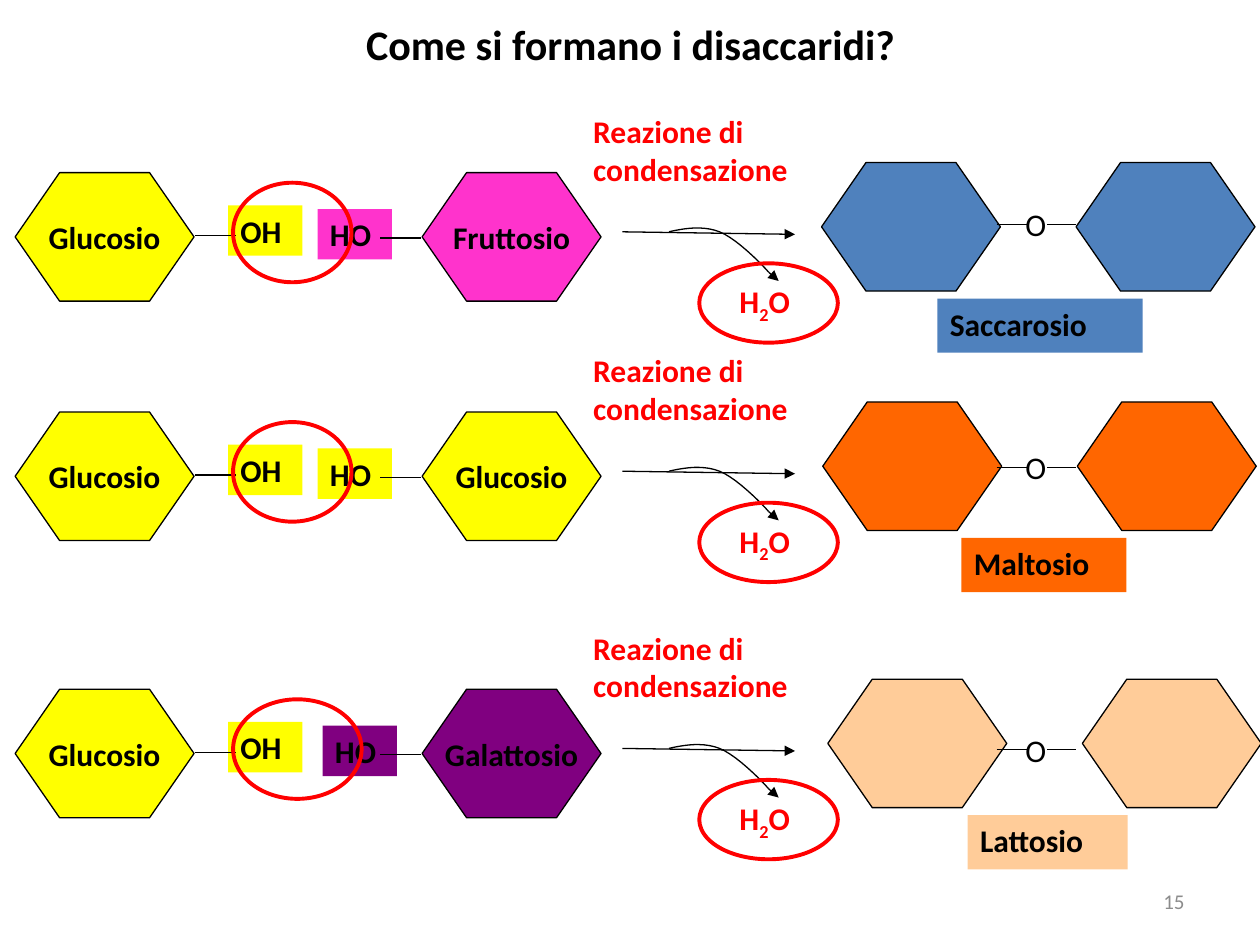
from dataclasses import dataclass

import pptx
import pptx.dml.color
import pptx.enum.shapes
import pptx.enum.text
import pptx.oxml.ns
import pptx.util
from lxml import etree

Inches = pptx.util.Inches
Pt = pptx.util.Pt
RGBColor = pptx.dml.color.RGBColor
Shape = pptx.enum.shapes.MSO_SHAPE
Align = pptx.enum.text.PP_ALIGN
Anchor = pptx.enum.text.MSO_ANCHOR
qn = pptx.oxml.ns.qn

BLACK = RGBColor(0x00, 0x00, 0x00)
GREY = RGBColor(0x8C, 0x8C, 0x8C)
RED = RGBColor(0xFF, 0x00, 0x00)
YELLOW = RGBColor(0xFF, 0xFF, 0x00)
PINK = RGBColor(0xFF, 0x33, 0xCC)
PURPLE = RGBColor(0x80, 0x00, 0x80)
BLUE = RGBColor(0x4F, 0x81, 0xBD)
ORANGE = RGBColor(0xFF, 0x66, 0x00)
PEACH = RGBColor(0xFF, 0xCC, 0x99)

HEXAGON_SIZE = (1.42, 1.02)
THIN, THICK = 0.75, 2.25


@dataclass
class Reaction:
    """One row; top is the upper edge of the reactant hexagons."""
    top: float
    sugar: str
    sugar_color: RGBColor
    product: str
    product_color: RGBColor
    product_left: float
    label_left: float
    label_width: float
    bond_drop: float
    hydroxyl_left: float = 2.52
    ring_width: float = 0.94


REACTIONS = [
    Reaction(1.37, "Fruttosio", PINK, "Saccarosio", BLUE, 6.52, 7.44, 1.63, 0.41),
    Reaction(3.27, "Glucosio", YELLOW, "Maltosio", ORANGE, 6.53, 7.63, 1.31, 0.44),
    Reaction(5.47, "Galattosio", PURPLE, "Lattosio", PEACH, 6.57, 7.68, 1.27, 0.48,
             hydroxyl_left=2.56, ring_width=1.02),
]

deck = pptx.Presentation()
deck.slide_width, deck.slide_height = Inches(10), Inches(7.5)
page = deck.slides.add_slide(deck.slide_layouts[6])


def write(box, text: str, wrap: bool = True, align=Align.LEFT, anchor=Anchor.TOP,
          size: float = 18, color: RGBColor = BLACK, bold: bool = True):
    """Put one paragraph in a shape and return it."""
    frame = box.text_frame
    for name, value in {"word_wrap": wrap, "vertical_anchor": anchor}.items():
        setattr(frame, name, value)
    para = frame.paragraphs[0]
    para.alignment = align
    add_span(para, text, size, color, bold)
    return para


def add_span(para, text: str, size: float, color: RGBColor, bold: bool):
    span = para.add_run()
    span.text = text
    for name, value in {"name": "Calibri", "size": Pt(size), "bold": bold}.items():
        setattr(span.font, name, value)
    span.font.color.rgb = color
    return span


def add_text(left: float, top: float, width: float, height: float, text: str, **style):
    box = page.shapes.add_textbox(Inches(left), Inches(top), Inches(width), Inches(height))
    return write(box, text, **style)


def add_figure(kind, left: float, top: float, width: float, height: float,
               fill: RGBColor = None, line: RGBColor = None, weight: float = THIN):
    figure = page.shapes.add_shape(kind, Inches(left), Inches(top),
                                   Inches(width), Inches(height))
    paint(figure, fill, line, weight)
    return figure


def paint(figure, fill: RGBColor, line: RGBColor, weight: float) -> None:
    figure.shadow.inherit = False
    if fill is None:
        figure.fill.background()
    else:
        figure.fill.solid()
        figure.fill.fore_color.rgb = fill
    if line is None:
        figure.line.fill.background()
    else:
        figure.line.color.rgb = line
        figure.line.width = Pt(weight)


def add_hexagon(left: float, top: float, fill: RGBColor, text: str = "") -> None:
    hexagon = add_figure(Shape.HEXAGON, left, top, *HEXAGON_SIZE, fill, BLACK)
    hexagon.adjustments[0] = 0.346
    if text:
        write(hexagon, text, wrap=False, align=Align.CENTER, anchor=Anchor.MIDDLE)


def add_label(left: float, top: float, width: float, height: float,
              fill: RGBColor, text: str) -> None:
    write(add_figure(Shape.RECTANGLE, left, top, width, height, fill), text)


def add_line(x1: float, y1: float, x2: float, y2: float, arrow: bool = False) -> None:
    line = page.shapes.add_connector(pptx.enum.shapes.MSO_CONNECTOR.STRAIGHT,
                                     Inches(x1), Inches(y1), Inches(x2), Inches(y2))
    line.line.color.rgb = BLACK
    line.line.width = Pt(THIN)
    properties = line._element.spPr
    if arrow:
        etree.SubElement(properties.find(qn("a:ln")), qn("a:tailEnd"), type="triangle")
    etree.SubElement(properties, qn("a:effectLst"))


def bezier(points: list, steps: int = 10) -> list:
    """Points along a cubic curve, without its start."""
    curve = []
    for step in range(1, steps + 1):
        t = step / steps
        weights = ((1 - t) ** 3, 3 * t * (1 - t) ** 2, 3 * t ** 2 * (1 - t), t ** 3)
        curve.append(tuple(Inches(sum(w * point[axis] for w, point in zip(weights, points)))
                           for axis in (0, 1)))
    return curve


def add_water_curve(top: float) -> None:
    nodes = [(x, top + drop) for x, drop in (
        (5.31, 0.47), (5.44, 0.44), (5.58, 0.42), (5.71, 0.47),
        (5.84, 0.52), (6.04, 0.72), (6.1, 0.79))]
    builder = page.shapes.build_freeform(Inches(nodes[0][0]), Inches(nodes[0][1]))
    builder.add_line_segments(bezier(nodes[:4]) + bezier(nodes[3:]), close=False)
    paint(builder.convert_to_shape(), None, BLACK, THIN)
    add_line(6.1, top + 0.79, 6.18, top + 0.86, arrow=True)


def add_reactants(row: Reaction) -> None:
    top = row.top
    add_hexagon(0.12, top, YELLOW, "Glucosio")
    add_label(1.81, top + 0.26, 0.59, 0.4, YELLOW, "OH")
    add_line(1.55, top + 0.5, 1.87, top + 0.5)
    add_hexagon(3.35, top, row.sugar_color, row.sugar)
    add_label(row.hydroxyl_left, top + 0.29, 0.59, 0.4, row.sugar_color, "HO")
    add_line(3.02, top + 0.52, 3.34, top + 0.52)


def add_condensation(row: Reaction) -> None:
    top = row.top
    add_line(4.94, top + 0.47, 6.31, top + 0.49, arrow=True)
    add_text(4.61, top - 0.53, 2.13, 0.77, "Reazione di condensazione", color=RED)
    add_figure(Shape.OVAL, 1.85, top + 0.08, row.ring_width, 0.79, line=RED, weight=THICK)
    add_water_curve(top)
    water = add_text(5.77, top + 0.82, 0.7, 0.4, "H", color=RED)
    subscript = add_span(water, "2", 18, RED, True)
    subscript.font._element.set("baseline", "-25000")
    add_span(water, "O", 18, RED, True)
    add_figure(Shape.OVAL, 5.55, top + 0.72, 1.1, 0.63, line=RED, weight=THICK)


def add_product(row: Reaction) -> None:
    top, bond = row.top, row.top + row.bond_drop
    for left in (row.product_left + 2.02, row.product_left):
        add_hexagon(left, top - 0.08, row.product_color)
    add_label(row.label_left, top + 1, row.label_width, 0.43, row.product_color, row.product)
    add_text(8.04, bond - 0.2, 0.42, 0.43, "O", bold=False)
    for start, end in ((7.91, 8.15), (8.31, 8.54)):
        add_line(start, bond, end, bond)


# Slide number and title
add_text(7.17, 6.95, 2.33, 0.4, "15", align=Align.RIGHT, anchor=Anchor.MIDDLE,
         size=12, color=GREY, bold=False)
add_text(0.13, 0.1, 9.75, 0.5, "Come si formano i disaccaridi?", align=Align.CENTER, size=24)

# The three reactions
for draw in (add_reactants, add_condensation, add_product):
    for reaction in REACTIONS:
        draw(reaction)

deck.save("out.pptx")
